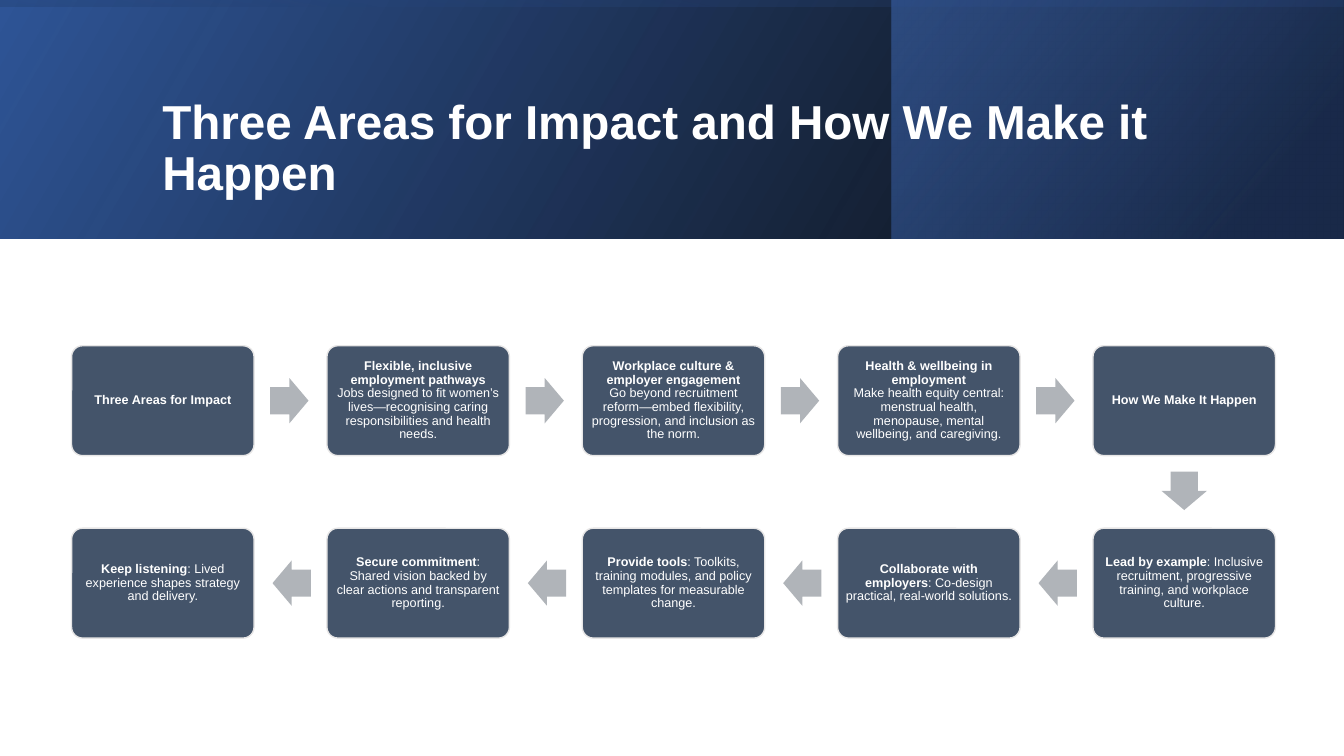
from lxml import etree
from pptx import Presentation
from pptx.dml.color import RGBColor
from pptx.enum.shapes import MSO_SHAPE
from pptx.enum.text import MSO_ANCHOR, MSO_AUTO_SIZE, PP_ALIGN
from pptx.oxml.ns import qn
from pptx.util import Inches, Pt

RECT, ROUNDED = MSO_SHAPE.RECTANGLE, MSO_SHAPE.ROUNDED_RECTANGLE
ARROW = MSO_SHAPE.RIGHT_ARROW
LEFT, CENTER = PP_ALIGN.LEFT, PP_ALIGN.CENTER
MIDDLE = MSO_ANCHOR.MIDDLE
NO_AUTOFIT = MSO_AUTO_SIZE.NONE

# Content: each step is a bold lead and its detail; "\n" starts a new line
TITLE = "Three Areas for Impact and How We Make it Happen"
AREAS = [
    ("Three Areas for Impact", ""),
    ("Flexible, inclusive employment pathways",
     "\nJobs designed to fit women’s lives—recognising caring "
     "responsibilities and health needs."),
    ("Workplace culture & employer engagement",
     "\nGo beyond recruitment reform—embed flexibility, progression, "
     "and inclusion as the norm."),
    ("Health & wellbeing in employment",
     "\nMake health equity central: menstrual health, menopause, "
     "mental wellbeing, and caregiving."),
    ("How We Make It Happen", ""),
]
ACTIONS = [
    ("Lead by example",
     ": Inclusive recruitment, progressive training, and workplace culture."),
    ("Collaborate with employers",
     ": Co-design practical, real-world solutions."),
    ("Provide tools",
     ": Toolkits, training modules, and policy templates for measurable change."),
    ("Secure commitment",
     ": Shared vision backed by clear actions and transparent reporting."),
    ("Keep listening",
     ": Lived experience shapes strategy and delivery."),
]

COLORS = {
    "white": "FFFFFF", "box": "44546A", "outline": "E7E6E6", "arrow": "B0B4B9",
    "black": "000000", "blue": "2F5597", "navy": "203864", "sky": "4472C4",
}

# Header bands: left, top, width, height, rotation, gradient angle,
# gradient stops of position, colour and opacity in percent
BANDS = [
    (0, 0, 13.33, 2.37, 0, 330, [(0, "black", 96), (100, "blue", 100)]),
    (8.84, 0, 4.48, 2.37, 0, 320, [(19, "navy", 68), (100, "sky", 48)]),
    (5.48, -5.48, 2.37, 13.33, 270, 350, [(23, "blue", 16), (99, "black", 45)]),
]

# Flow geometry in inches
FIRST_X, LAST_X = 0.71, 10.84
AREAS_Y, ACTIONS_Y = 3.43, 5.24
BOX_W, BOX_H = 1.81, 1.09
ARROW_W, ARROW_H = 0.38, 0.45
ARROW_GAP = 0.16
PITCH = (LAST_X - FIRST_X) / (len(AREAS) - 1)

prs = Presentation()
prs.slide_width, prs.slide_height = Inches(13.33), Inches(7.5)
slide = prs.slides.add_slide(prs.slide_layouts[5])


def rgb(name):
    return RGBColor.from_string(COLORS[name])


def write_text(shape, runs, size, align, insets):
    """Fill a shape with (text, bold) runs in one paragraph."""
    frame = shape.text_frame
    frame.word_wrap = True
    frame.auto_size = NO_AUTOFIT
    frame.vertical_anchor = MIDDLE
    (frame.margin_left, frame.margin_top,
     frame.margin_right, frame.margin_bottom) = map(Inches, insets)
    paragraph = frame.paragraphs[0]
    paragraph.alignment = align
    paragraph.line_spacing = 0.9
    for text, bold in runs:
        if text.startswith("\n"):
            paragraph.add_line_break()
        run = paragraph.add_run()
        run.text = text.strip("\n")
        run.font.name, run.font.size, run.font.bold = "Arial", Pt(size), bold
        run.font.color.rgb = rgb("white")


def add_plain_shape(kind, x, y, w, h, fill=None, rotation=0):
    shape = slide.shapes.add_shape(kind, *map(Inches, (x, y, w, h)))
    shape.shadow.inherit = False
    shape.rotation = rotation
    shape.line.fill.background()
    if fill:
        shape.fill.solid()
        shape.fill.fore_color.rgb = rgb(fill)
    return shape


def add_band(x, y, w, h, rotation, angle, stops):
    band = add_plain_shape(RECT, x, y, w, h, rotation=rotation)
    properties = band._element.spPr
    properties.find(qn("a:xfrm")).set("flipH", "1")
    gradient = etree.Element(qn("a:gradFill"), rotWithShape="1")
    stop_list = etree.SubElement(gradient, qn("a:gsLst"))
    for position, color, opacity in stops:
        stop = etree.SubElement(stop_list, qn("a:gs"), pos=str(position * 1000))
        tone = etree.SubElement(stop, qn("a:srgbClr"), val=COLORS[color])
        etree.SubElement(tone, qn("a:alpha"), val=str(opacity * 1000))
    etree.SubElement(gradient, qn("a:lin"), ang=str(angle * 60000), scaled="0")
    properties.find(qn("a:prstGeom")).addnext(gradient)


def add_step(x, y, lead, detail):
    box = add_plain_shape(ROUNDED, x, y, BOX_W, BOX_H, fill="box")
    box.adjustments[0] = 0.1
    box.line.color.rgb = rgb("outline")
    box.line.width = Pt(1)
    runs = [(lead, True)] + ([(detail, False)] if detail else [])
    # The rounded corners add about 0.03 inches to the insets
    write_text(box, runs, size=9, align=CENTER, insets=(0.04,) * 4)


def add_arrow(x, y, rotation):
    arrow = add_plain_shape(ARROW, x, y, ARROW_W, ARROW_H, "arrow", rotation)
    arrow.adjustments[0], arrow.adjustments[1] = 0.6, 0.5


# Header
for band_spec in BANDS:
    add_band(*band_spec)
title = slide.shapes.title
title.left, title.top, title.width, title.height = map(
    Inches, (1.51, 0.38, 10.63, 1.72))
write_text(title, [(TITLE, True)], size=34, align=LEFT,
           insets=(0.1, 0.54, 0.1, 0.05))
slide.shapes._spTree.append(title._element)

# Areas run left to right, actions return right to left
arrow_drop = (BOX_H - ARROW_H) / 2
for index, (area, action) in enumerate(zip(AREAS, ACTIONS)):
    area_x = FIRST_X + index * PITCH
    action_x = LAST_X - index * PITCH
    add_step(area_x, AREAS_Y, *area)
    add_step(action_x, ACTIONS_Y, *action)
    if index < len(AREAS) - 1:
        add_arrow(area_x + BOX_W + ARROW_GAP, AREAS_Y + arrow_drop, 0)
        add_arrow(action_x - ARROW_GAP - ARROW_W, ACTIONS_Y + arrow_drop, 180)

# Turn from the areas down to the actions
add_arrow(LAST_X + (BOX_W - ARROW_W) / 2,
          (AREAS_Y + BOX_H + ACTIONS_Y - ARROW_H) / 2 - 0.01, 90)

prs.save("out.pptx")
